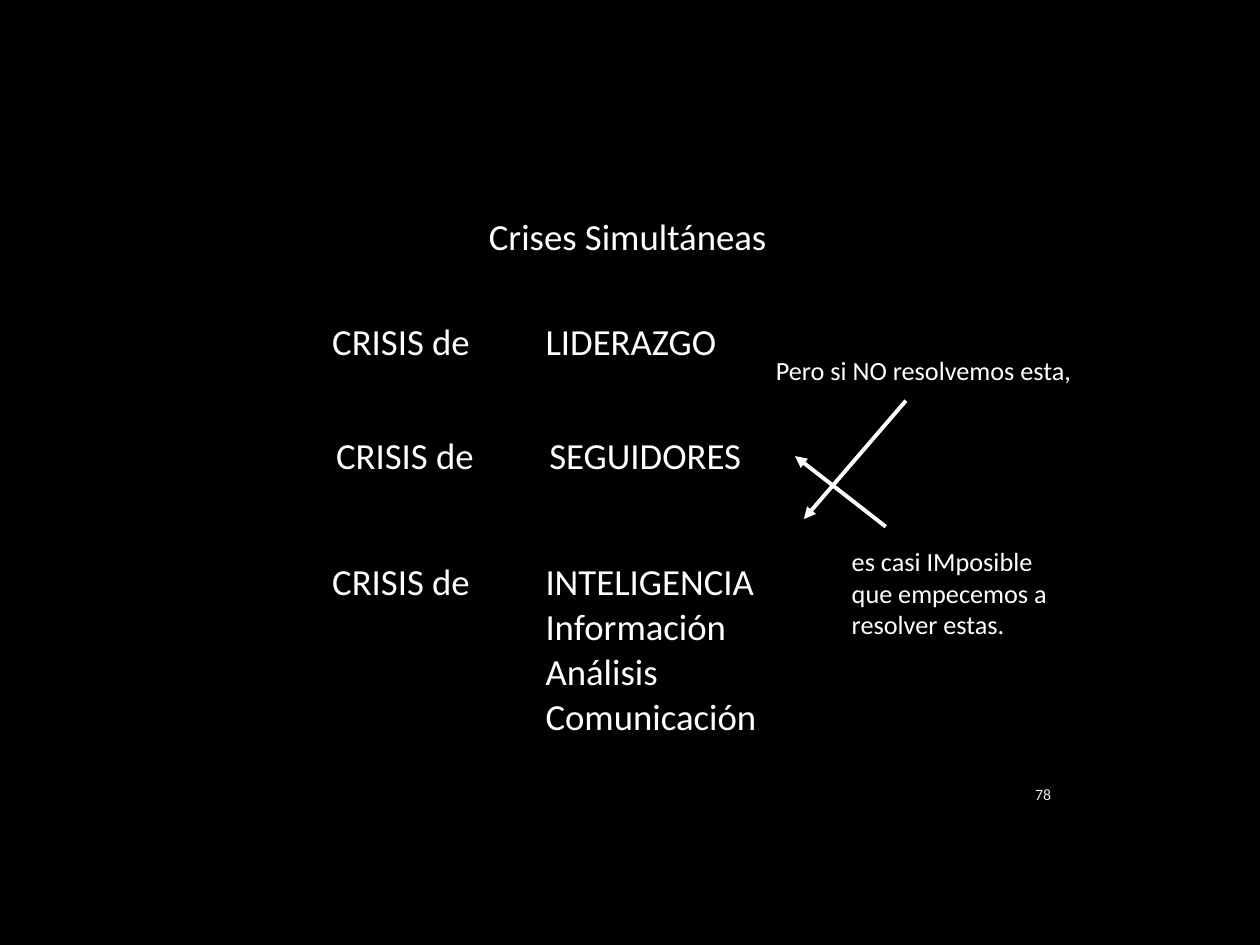
from lxml.etree import SubElement
from pptx import Presentation
from pptx.dml.color import RGBColor
from pptx.enum.shapes import MSO_CONNECTOR, MSO_SHAPE
from pptx.enum.text import MSO_ANCHOR, PP_ALIGN
from pptx.oxml.ns import qn
from pptx.util import Inches, Pt

BLACK = RGBColor(0x00, 0x00, 0x00)
WHITE = RGBColor(0xFF, 0xFF, 0xFF)
PALE_GRAY = RGBColor(0xED, 0xED, 0xED)
FONT = "Calibri"
PLAIN_TABLE_STYLE = "{2D5ABB26-0587-4C30-8999-92F81FD0307C}"
CELL_MARGIN = Inches(0.3)


def write(frame, text, size=21, color=WHITE, align=PP_ALIGN.LEFT,
          anchor=MSO_ANCHOR.TOP, wrap=True):
    frame.text = text
    frame.word_wrap = wrap
    frame.vertical_anchor = anchor
    for paragraph in frame.paragraphs:
        paragraph.alignment = align
        paragraph.font.name = FONT
        paragraph.font.size = Pt(size)
        paragraph.font.color.rgb = color


presentation = Presentation()
presentation.slide_width = Inches(10)
presentation.slide_height = Inches(7.5)
slide = presentation.slides.add_slide(presentation.slide_layouts[5])
slide.background.fill.solid()
slide.background.fill.fore_color.rgb = BLACK

# Title
title = slide.shapes.title
title.left, title.top = Inches(3.78), Inches(1.65)
title.width, title.height = Inches(2.49), Inches(0.45)
write(title.text_frame, "Crises Simultáneas", wrap=False)

# One table per crisis: top, height, column widths, subject
crises = [
    (2.24, 0.95, (1.97, 3), "LIDERAZGO"),
    (3.15, 0.95, (2, 2.44), "SEGUIDORES"),
    (4.15, 2, (1.97, 3), "INTELIGENCIA\nInformación\nAnálisis\nComunicación"),
]
for top, height, widths, subject in crises:
    frame = slide.shapes.add_table(1, 2, Inches(2.06), Inches(top),
                                   Inches(sum(widths)), Inches(height))
    table = frame.table
    table.first_row = table.horz_banding = False
    table._tbl.tblPr.find(qn("a:tableStyleId")).text = PLAIN_TABLE_STYLE
    contents = [("CRISIS de", PP_ALIGN.RIGHT), (subject, PP_ALIGN.LEFT)]
    for column, (text, align) in enumerate(contents):
        table.columns[column].width = Inches(widths[column])
        cell = table.cell(0, column)
        cell.fill.background()
        cell.margin_left = cell.margin_right = CELL_MARGIN
        cell.margin_top = cell.margin_bottom = CELL_MARGIN
        write(cell.text_frame, text, align=align)

# Comments on the right
condition = slide.shapes.add_textbox(Inches(6.06), Inches(2.76), Inches(2.62), Inches(0.35))
write(condition.text_frame, "Pero si NO resolvemos esta,", size=15, wrap=False)

consequence = slide.shapes.add_shape(MSO_SHAPE.RECTANGLE, Inches(6.69), Inches(4.29),
                                     Inches(1.74), Inches(0.85))
consequence.shadow.inherit = False
consequence.fill.solid()
consequence.fill.fore_color.rgb = BLACK
consequence.line.fill.background()
consequence.text_frame.margin_left = Inches(0.07)
consequence.text_frame.margin_top = Inches(0.04)
write(consequence.text_frame, "es casi IMposible que empecemos a resolver estas.", size=15)

# Crossing arrows
for start_x, start_y, end_x, end_y in [(7.19, 3.18, 6.38, 4.12), (7.03, 4.18, 6.31, 3.62)]:
    arrow = slide.shapes.add_connector(MSO_CONNECTOR.STRAIGHT, Inches(start_x), Inches(start_y),
                                       Inches(end_x), Inches(end_y))
    arrow.line.color.rgb = WHITE
    arrow.line.width = Pt(2.25)
    SubElement(arrow.line._get_or_add_ln(), qn("a:tailEnd"), type="triangle")
    SubElement(arrow._element.spPr, qn("a:effectLst"))

# Page number
page_number = slide.shapes.add_textbox(Inches(6.75), Inches(6.15), Inches(1.69), Inches(0.3))
write(page_number.text_frame, "78", size=9, color=PALE_GRAY, align=PP_ALIGN.RIGHT,
      anchor=MSO_ANCHOR.MIDDLE)

presentation.save("out.pptx")
